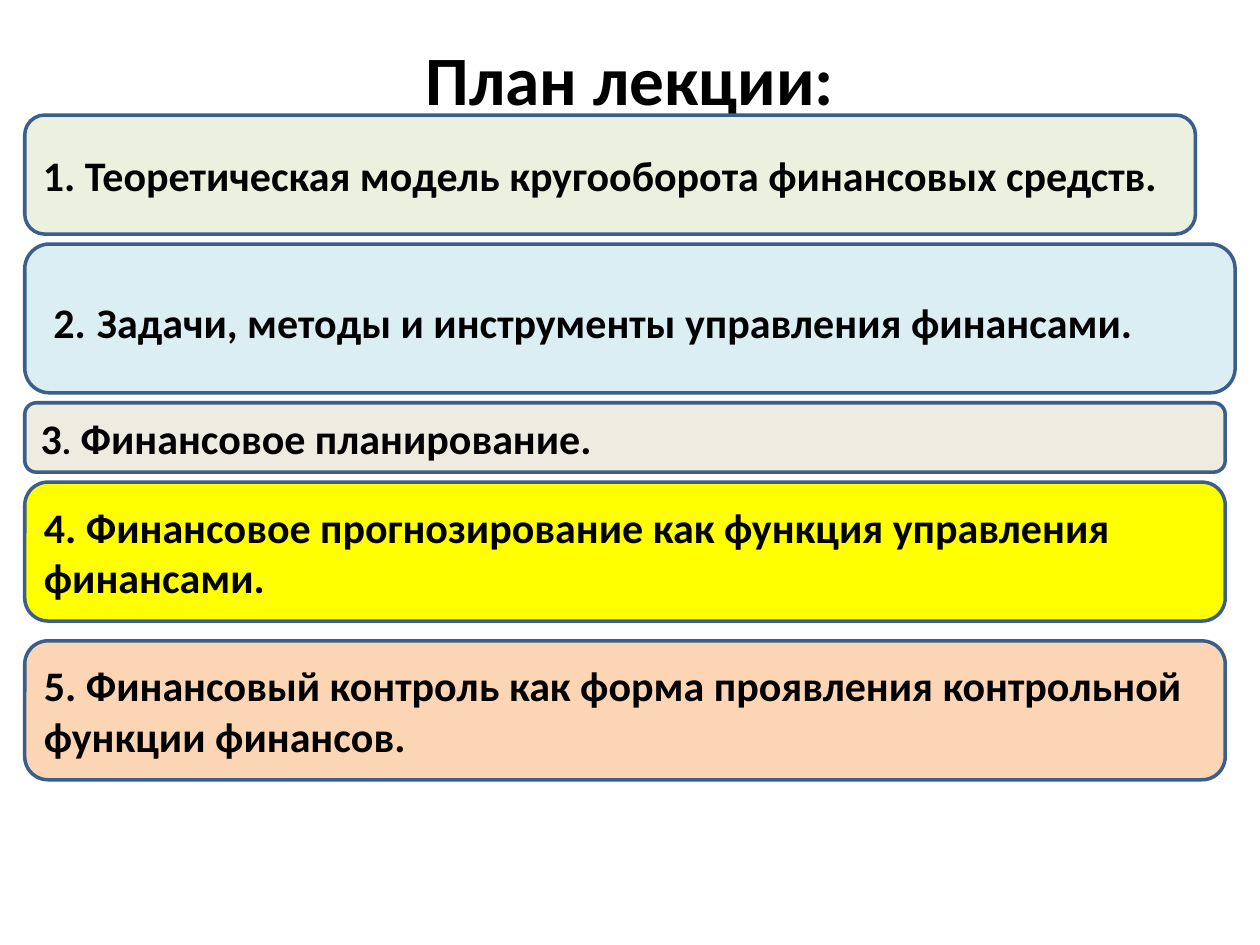
from dataclasses import dataclass

from pptx import Presentation
from pptx.dml.color import RGBColor
from pptx.enum.shapes import MSO_SHAPE as Shape
from pptx.enum.text import MSO_ANCHOR as Anchor, PP_ALIGN as Align
from pptx.util import Cm, Inches, Pt


@dataclass(frozen=True)
class Theme:
    font: str = "Calibri"
    ink: str = "000000"
    outline: str = "3A5F8C"
    green: str = "EBF1DE"
    blue: str = "DBEEF4"
    sand: str = "EEECE1"
    yellow: str = "FFFF00"
    peach: str = "FCD5B5"
    title: float = 39.6
    body: float = 24
    wide: float = 28
    small: float = 20
    line: float = 2


class PlanSlide:
    cell = 0.2

    def __init__(self, deck, theme):
        self.theme = theme
        self.slide = deck.slides.add_slide(deck.slide_layouts[6])

    def grid(self, *cells):
        return [Cm(count * self.cell) for count in cells]

    def set_text(self, shape, runs, align):
        frame = shape.text_frame
        frame.word_wrap = True
        frame.vertical_anchor = Anchor.MIDDLE
        paragraph = frame.paragraphs[0]
        paragraph.alignment = align
        for words, size in runs:
            run = paragraph.add_run()
            run.text = words
            style = {"name": self.theme.font, "size": Pt(size), "bold": True}
            for key, value in style.items():
                setattr(run.font, key, value)
            run.font.color.rgb = RGBColor.from_string(self.theme.ink)

    def title(self, words, left, top, width, height):
        box = self.slide.shapes.add_textbox(*self.grid(left, top, width, height))
        self.set_text(box, [(words, self.theme.title)], Align.CENTER)

    def topic(self, runs, fill, left, top, width, height, indent=0):
        card = self.slide.shapes.add_shape(
            Shape.ROUNDED_RECTANGLE, *self.grid(left, top, width, height))
        card.shadow.inherit = False
        card.fill.solid()
        card.fill.fore_color.rgb = RGBColor.from_string(fill)
        card.line.color.rgb = RGBColor.from_string(self.theme.outline)
        card.line.width = Pt(self.theme.line)
        card.text_frame.margin_left = Inches(0.1 + indent)
        self.set_text(card, runs, Align.LEFT)


def main():
    theme = Theme()
    deck = Presentation()
    deck.slide_width, deck.slide_height = Inches(10), Inches(7.5)
    plan = PlanSlide(deck, theme)
    plan.title("План лекции:", 6.35, 4, 114.3, 7.75)

    body = theme.body
    topics = [
        ([("1. Теоретическая модель кругооборота финансовых средств.", body)],
         theme.green, 118, 12, 1, 0),
        ([("2.", body), (" ", theme.wide),
          ("Задачи, методы и инструменты управления финансами.", body)],
         theme.blue, 122, 15, 1, 0.07),
        ([("3", body), (".", theme.small), (" Финансовое планирование.", body)],
         theme.sand, 121, 7, 1, 0),
        ([("4. Финансовое прогнозирование как функция управления финансами.", body)],
         theme.yellow, 121, 14, 2, 0),
        ([("5. Финансовый контроль как форма проявления контрольной функции финансов.",
           body)],
         theme.peach, 121, 14, 0, 0),
    ]
    top = 11.6
    for runs, fill, width, height, gap, indent in topics:
        plan.topic(runs, fill, 2.5, top, width, height, indent)
        top += height + gap

    deck.save("out.pptx")


if __name__ == "__main__":
    main()
